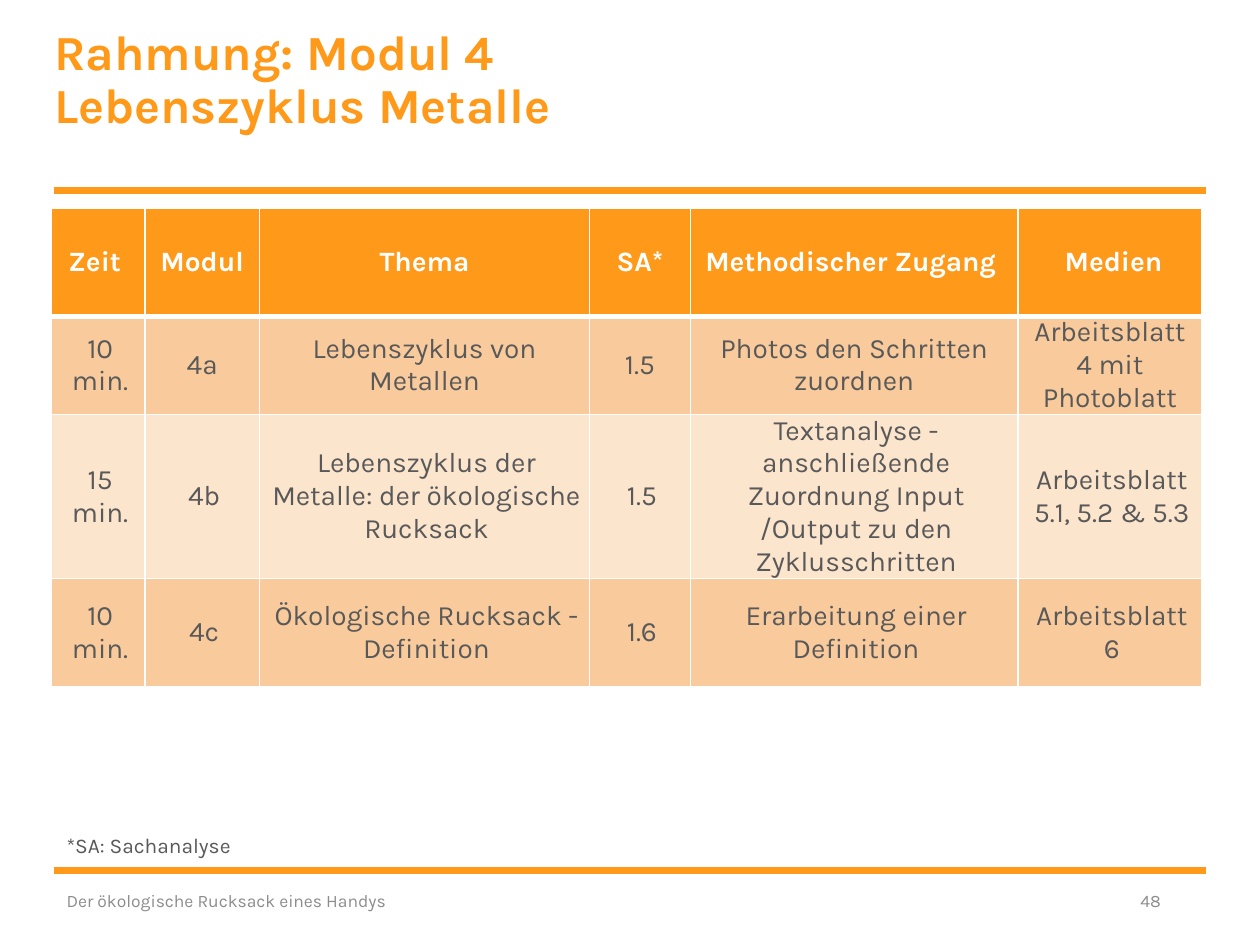
from pptx import Presentation
from pptx.dml.color import RGBColor
from pptx.enum.shapes import MSO_CONNECTOR as Conn
from pptx.enum.text import MSO_ANCHOR as Anchor, MSO_AUTO_SIZE as Fit, PP_ALIGN as Align
from pptx.oxml import parse_xml
from pptx.oxml.ns import nsdecls
from pptx.util import Inches, Pt

ORANGE, GREY, WHITE = "FF9919", "595959", "FFFFFF"


def color(code):
    return RGBColor.from_string(code)


def add_run(par, text, size, code, bold=False):
    run = par.add_run()
    run.text = text
    font = run.font
    font.name, font.size, font.bold = "Karla", Pt(size), bold
    font.color.rgb = color(code)


prs = Presentation()
prs.slide_width, prs.slide_height = Inches(10), Inches(7.5)
slide = prs.slides.add_slide(prs.slide_layouts[5])
shapes = slide.shapes

# Rules above and below the content
for y in (1.51, 6.91):
    rule = shapes.add_connector(Conn.STRAIGHT, Inches(0.43), Inches(y), Inches(9.57), Inches(y))
    rule.line.color.rgb = color(ORANGE)
    rule.line.width = Pt(4)
    rule._element.spPr.append(parse_xml(f"<a:effectLst {nsdecls('a')}/>"))

# Title
title = shapes.title
title.left, title.top = Inches(0.43), Inches(0.22)
title.width, title.height = Inches(6.69), Inches(1.17)
frame = title.text_frame
frame.margin_left = frame.margin_right = frame.margin_top = frame.margin_bottom = 0
frame.word_wrap, frame.auto_size = True, Fit.NONE
frame.vertical_anchor = Anchor.TOP
par = frame.paragraphs[0]
par.alignment, par.line_spacing = Align.LEFT, 0.9
add_run(par, "Rahmung: Modul 4", 28, ORANGE, True)
par.add_line_break()
add_run(par, "Lebenszyklus Metalle", 28, ORANGE, True)

# Schedule table
rows = [
    ["Zeit ", "Modul", "Thema", "SA*", "Methodischer Zugang ", " Medien"],
    ["10 min.", "4a", "Lebenszyklus von Metallen", "1.5",
     "Photos den Schritten zuordnen", "Arbeitsblatt 4 mit Photoblatt"],
    ["15 min.", "4b", "Lebenszyklus der Metalle: der ökologische Rucksack", "1.5",
     "Textanalyse - anschließende Zuordnung Input /Output zu den Zyklusschritten",
     "Arbeitsblatt 5.1, 5.2 & 5.3"],
    ["10 min.", "4c", "Ökologische Rucksack - Definition", "1.6",
     "Erarbeitung einer Definition", "Arbeitsblatt 6"],
]
widths = [0.74, 0.91, 2.62, 0.8, 2.6, 1.46]
heights = [0.86, 0.68, 0.86, 0.86]
fills = [ORANGE, "F9CB9C", "FCE5CD", "F9CB9C"]
table = shapes.add_table(len(rows), len(widths), Inches(0.41), Inches(1.65),
                         Inches(9.14), Inches(sum(heights))).table
for col, width in zip(table.columns, widths):
    col.width = Inches(width)
for r, texts in enumerate(rows):
    table.rows[r].height = Inches(heights[r])
    head = r == 0
    for c, text in enumerate(texts):
        cell = table.cell(r, c)
        cell.margin_left = cell.margin_right = Inches(0.07)
        cell.margin_top = cell.margin_bottom = 0
        cell.vertical_anchor = Anchor.MIDDLE
        # White borders, thicker between header and body
        props = cell._tc.get_or_add_tcPr()
        for side in "LRTB":
            thick = (head and side == "B") or (r == 1 and side == "T")
            props.append(parse_xml(
                f'<a:ln{side} {nsdecls("a")} w="{Pt(3 if thick else 1)}"><a:solidFill>'
                f'<a:srgbClr val="{WHITE}"/></a:solidFill></a:ln{side}>'))
        cell.fill.solid()
        cell.fill.fore_color.rgb = color(fills[r])
        par = cell.text_frame.paragraphs[0]
        par.alignment = Align.CENTER
        if head and text != "SA*":
            par.space_after = Pt(3)
        if r > 1 or (r == 1 and c == 0):
            par._p.get_or_add_pPr().set("marL", str(Inches(0.03)))
        add_run(par, text, 16, WHITE if head else GREY, head)

# Footnote, footer and page number
notes = [
    ("*SA: Sachanalyse", 0.43, 6.56, 2.75, 0.3, 12, GREY, Align.LEFT, Anchor.TOP),
    ("Der ökologische Rucksack eines Handys", 0.43, 6.95, 3.38, 0.4, 10, "8C8C8C",
     Align.LEFT, Anchor.MIDDLE),
    ("48", 7.52, 6.95, 1.79, 0.4, 10, "8C8C8C", Align.RIGHT, Anchor.MIDDLE),
]
for text, x, y, w, h, size, code, align, anchor in notes:
    frame = shapes.add_textbox(Inches(x), Inches(y), Inches(w), Inches(h)).text_frame
    frame.word_wrap, frame.vertical_anchor = True, anchor
    par = frame.paragraphs[0]
    par.alignment = align
    add_run(par, text, size, code)

prs.save("out.pptx")
